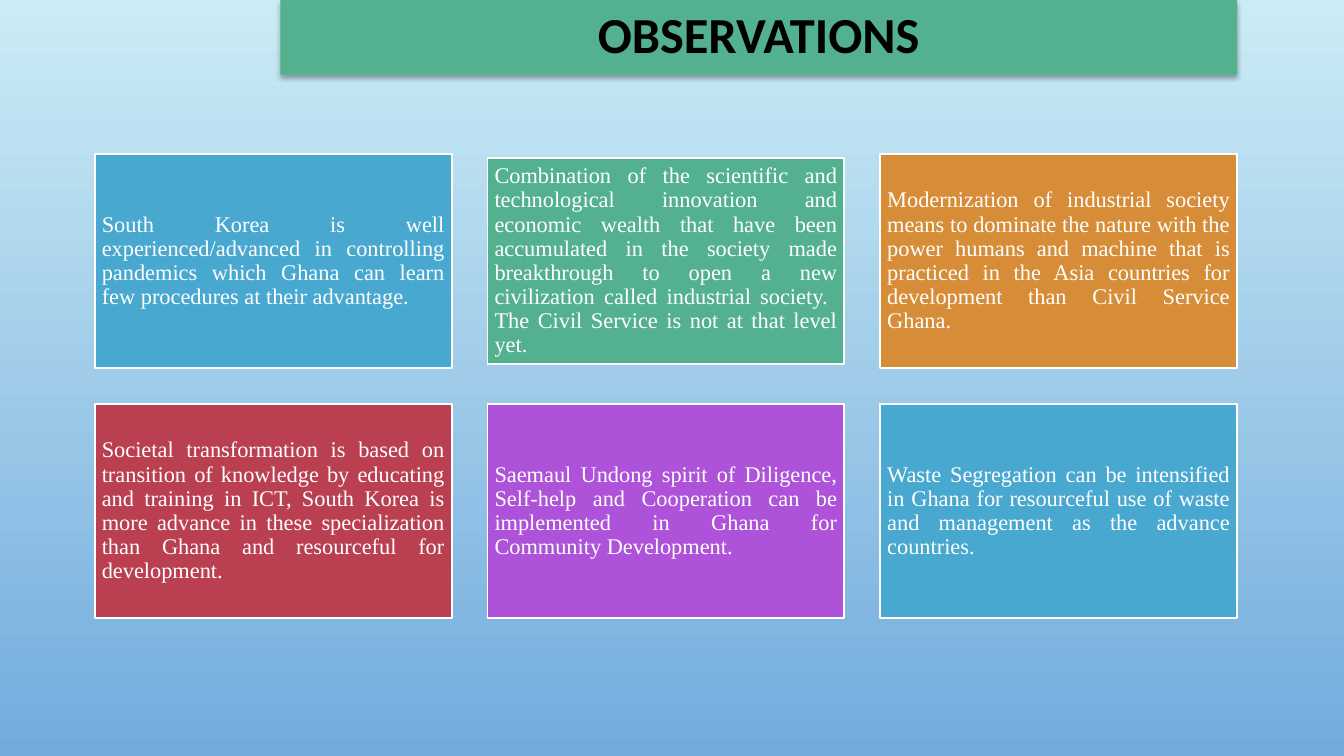
"""Build the Observations slide: a title bar above a grid of six coloured cards."""
from lxml import etree
from pptx import Presentation
from pptx.dml.color import RGBColor
from pptx.enum.shapes import MSO_SHAPE
from pptx.enum.text import MSO_ANCHOR, PP_ALIGN
from pptx.oxml import parse_xml
from pptx.oxml.ns import nsdecls, qn
from pptx.util import Inches, Pt

RECTANGLE = MSO_SHAPE.RECTANGLE
MIDDLE = MSO_ANCHOR.MIDDLE
CENTER = PP_ALIGN.CENTER
JUSTIFY = PP_ALIGN.JUSTIFY

COLORS = {
    "sky_top": "CBECF5",
    "sky_bottom": "73ABDD",
    "blue": "48A8D0",
    "green": "53B18F",
    "orange": "D78D38",
    "red": "BA3F51",
    "purple": "AE52D9",
    "white": "FFFFFF",
    "black": "000000",
}

CARD_LEFT, CARD_TOP = 0.94, 1.53
CARD_WIDTH, CARD_HEIGHT = 3.54, 2.12
COLUMN_STEP, ROW_STEP = 3.895, 2.48
COLUMNS = 3
TALL_TEXT_HEIGHT = 2.05

CARDS = [
    ("blue", CARD_HEIGHT,
     "South Korea is well experienced/advanced in controlling pandemics which "
     "Ghana can learn few procedures at their advantage."),
    ("green", TALL_TEXT_HEIGHT,
     "Combination of the scientific and technological innovation and economic "
     "wealth that have been accumulated in the society made breakthrough to open "
     "a new civilization called industrial society.  The Civil Service is not at "
     "that level yet."),
    ("orange", CARD_HEIGHT,
     "Modernization of industrial society means to dominate the nature with the "
     "power humans and machine that is practiced in the Asia countries for "
     "development than Civil Service Ghana."),
    ("red", CARD_HEIGHT,
     "Societal transformation is based on transition of knowledge by educating "
     "and training in ICT, South Korea is more advance in these specialization "
     "than Ghana and resourceful for development."),
    ("purple", CARD_HEIGHT,
     "Saemaul Undong spirit of Diligence, Self-help and Cooperation can be "
     "implemented in Ghana for Community Development."),
    ("blue", CARD_HEIGHT,
     "Waste Segregation can be intensified in Ghana for resourceful use of waste "
     "and management as the advance countries."),
]


class SlideBuilder:
    """Hold the slide and draw its styled elements."""

    def __init__(self, slide):
        self.slide = slide

    def color(self, name):
        """Return the named colour."""
        return RGBColor.from_string(COLORS[name])

    def background(self, top, bottom):
        """Fill the background with a vertical gradient."""
        fill = self.slide.background.fill
        fill.gradient()
        fill.gradient_angle = 270
        for stop, name, position in zip(fill.gradient_stops, (top, bottom), (0, 1)):
            stop.color.rgb = self.color(name)
            stop.position = position

    def box(self, left, top, width, height, fill, text, font, size, ink, align):
        """Draw a filled rectangle with one paragraph and return it."""
        shape = self.slide.shapes.add_shape(
            RECTANGLE, Inches(left), Inches(top), Inches(width), Inches(height))
        shape.shadow.inherit = False
        shape.fill.solid()
        shape.fill.fore_color.rgb = self.color(fill)
        shape.line.fill.background()
        frame = shape.text_frame
        frame.word_wrap = True
        frame.vertical_anchor = MIDDLE
        frame.margin_left = frame.margin_right = Inches(0.07)
        frame.margin_top = frame.margin_bottom = Inches(0.07)
        paragraph = frame.paragraphs[0]
        paragraph.text = text
        paragraph.alignment = align
        paragraph.line_spacing = 0.9
        paragraph.font.name = font
        paragraph.font.size = Pt(size)
        paragraph.font.color.rgb = self.color(ink)
        return shape

    def title(self, text):
        """Draw the title bar with a soft shadow below it."""
        shape = self.box(2.78, 0, 9.49, 0.74, "green", text,
                         "Calibri", 36, "black", CENTER)
        shape.text_frame.paragraphs[0].font.bold = True
        effects = shape._element.spPr.find(qn("a:effectLst"))
        shadow = parse_xml(
            f'<a:outerShdw {nsdecls("a")} blurRad="{Pt(3.5)}" dist="{Pt(2.2)}" '
            'dir="5400000" algn="ctr" rotWithShape="0"/>')
        tint = etree.SubElement(shadow, qn("a:srgbClr"), val=COLORS["black"])
        etree.SubElement(tint, qn("a:alpha"), val="32000")
        effects.append(shadow)

    def card(self, left, top, height, fill, text):
        """Draw one observation card with a white outline."""
        shape = self.box(left, top, CARD_WIDTH, height, fill, text,
                         "Times New Roman", 16, "white", JUSTIFY)
        shape.line.color.rgb = self.color("white")
        shape.line.width = Pt(1.25)


def main():
    """Build and save the presentation."""
    presentation = Presentation()
    presentation.slide_width = Inches(13.33)
    presentation.slide_height = Inches(7.5)
    builder = SlideBuilder(presentation.slides.add_slide(presentation.slide_layouts[6]))
    builder.background("sky_top", "sky_bottom")
    builder.title("OBSERVATIONS")
    for index, (fill, height, text) in enumerate(CARDS):
        row, column = divmod(index, COLUMNS)
        left = CARD_LEFT + column * COLUMN_STEP
        top = CARD_TOP + row * ROW_STEP + (CARD_HEIGHT - height) / 2
        builder.card(left, top, height, fill, text)
    presentation.save("out.pptx")


if __name__ == "__main__":
    main()
